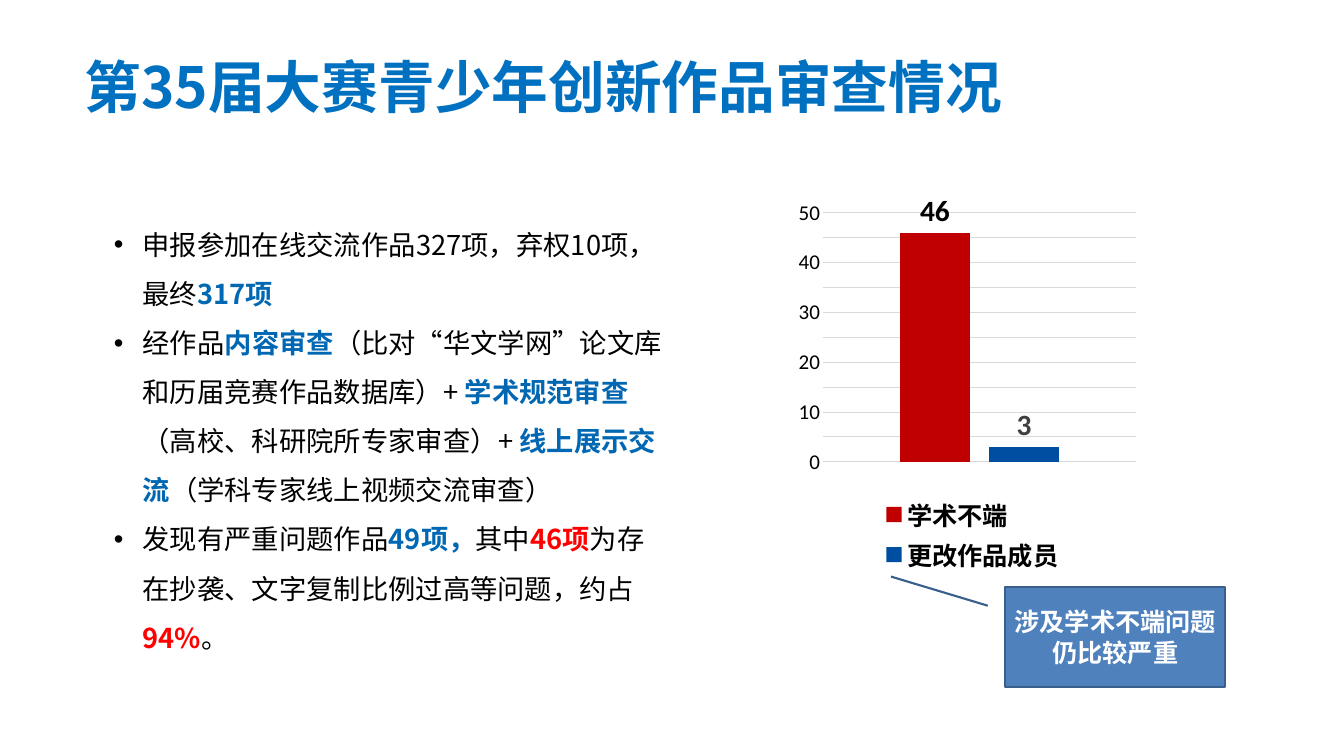
from copy import deepcopy

from lxml import etree
from pptx import Presentation
from pptx.chart.data import CategoryChartData
from pptx.dml.color import RGBColor
from pptx.enum.chart import XL_CHART_TYPE, XL_LABEL_POSITION as LabelPos
from pptx.enum.chart import XL_LEGEND_POSITION as LegendPos, XL_TICK_MARK as Tick
from pptx.enum.shapes import MSO_SHAPE
from pptx.enum.text import MSO_ANCHOR, MSO_AUTO_SIZE, PP_ALIGN
from pptx.oxml import parse_xml
from pptx.oxml.ns import nsdecls, qn
from pptx.util import Inches, Pt

COLORS = {"title": "0070C0", "text": "000000", "blue": "0067B2", "red": "FF0000",
          "grid": "D9D9D9", "callout": "4F81BD", "border": "3A5F8C", "white": "FFFFFF",
          "misconduct": "C00000", "members": "004EA1", "gray": "404040"}
CJK = "Noto Sans CJK SC"


def style(font, size, color, bold=False, name=CJK):
    font.size, font.bold, font.name = Pt(size), bold, name
    font.color.rgb = RGBColor.from_string(COLORS[color])


def style_run(r, size, color, bold=False, name=CJK):
    style(r.font, size, color, bold, name)
    ea = etree.SubElement(r.font._element, qn("a:ea"))
    ea.set("typeface", CJK)


prs = Presentation()
prs.slide_width, prs.slide_height = Inches(17.78), Inches(10)
s = prs.slides.add_slide(prs.slide_layouts[5])

# Title
title = s.shapes.title
title.left, title.top = Inches(1.02), Inches(0.67)
title.width, title.height = Inches(16.25), Inches(0.94)
tf = title.text_frame
tf.text = "第35届大赛青少年创新作品审查情况"
tf.vertical_anchor = MSO_ANCHOR.MIDDLE
tf.auto_size = MSO_AUTO_SIZE.NONE
p = tf.paragraphs[0]
p.alignment = PP_ALIGN.LEFT
style_run(p.runs[0], 54, "title", True)

# Review findings: coloured runs are bold
findings = [
    [("申报参加在线交流作品327项，弃权10项，最终", "text"), ("317项", "blue")],
    [("经作品", "text"), ("内容审查", "blue"),
     ("（比对“华文学网”论文库和历届竞赛作品数据库）+ ", "text"), ("学术规范审查", "blue"),
     ("（高校、科研院所专家审查）+ ", "text"), ("线上展示交流", "blue"),
     ("（学科专家线上视频交流审查）", "text")],
    [("发现有严重问题作品", "text"), ("49项，", "blue"), ("其中", "text"), ("46项", "red"),
     ("为存在抄袭、文字复制比例过高等问题，约占", "text"), ("94%", "red"), ("。", "text")],
]
tf = s.shapes.add_textbox(Inches(1.41), Inches(2.75), Inches(7.57), Inches(6.01)).text_frame
tf.word_wrap = True
tf.auto_size = MSO_AUTO_SIZE.SHAPE_TO_FIT_TEXT
for i, finding in enumerate(findings):
    p = tf.paragraphs[0] if i == 0 else tf.add_paragraph()
    p.line_spacing = 1.5
    pPr = p._p.get_or_add_pPr()
    pPr.set("marL", str(Inches(0.38)))
    pPr.set("indent", str(-Inches(0.38)))
    etree.SubElement(pPr, qn("a:buFont")).set("typeface", "Arial")
    etree.SubElement(pPr, qn("a:buChar")).set("char", "•")
    for text, color in finding:
        r = p.add_run()
        r.text = text
        style_run(r, 26, color, color != "text")

# Column chart of problem types
data = CategoryChartData()
data.categories = ["1"]
data.add_series("学术不端", [46])
data.add_series("更改作品成员", [3])
chart = s.shapes.add_chart(XL_CHART_TYPE.COLUMN_CLUSTERED, Inches(10.47), Inches(2.56),
                           Inches(4.65), Inches(5.07), data).chart
chart.has_title = False
style(chart.font, 10, "text", name="Calibri")
plot = chart.plots[0]
plot.gap_width, plot.overlap, plot.vary_by_categories = 219, -27, False
for series, color, label in zip(plot.series, ["misconduct", "members"], ["text", "gray"]):
    series.format.fill.solid()
    series.format.fill.fore_color.rgb = RGBColor.from_string(COLORS[color])
    labels = series.data_labels
    labels.show_value, labels.position = True, LabelPos.OUTSIDE_END
    style(labels.font, 28, label, True, "Calibri")

# Axes and gridlines; the minor gridlines take the look of the major ones
chart.category_axis.visible = False
axis = chart.value_axis
axis.minimum_scale, axis.maximum_scale = 0, 50
axis.major_unit, axis.minor_unit = 10, 5
axis.major_tick_mark = axis.minor_tick_mark = Tick.NONE
axis.format.line.fill.background()
style(axis.tick_labels.font, 20, "text", name="Calibri")
axis.has_major_gridlines = axis.has_minor_gridlines = True
grid = axis.major_gridlines.format.line
grid.color.rgb = RGBColor.from_string(COLORS["grid"])
grid.width = Pt(0.75)
major, minor = (axis._element.find(qn(f"c:{k}Gridlines")) for k in ("major", "minor"))
minor.append(deepcopy(major.find(qn("c:spPr"))))

# Legend, then the places of plot and legend inside the chart
chart.has_legend = True
legend = chart.legend
legend.position, legend.include_in_layout = LegendPos.BOTTOM, False
style(legend.font, 24, "text", True, "Calibri")
plot_area = chart._chartSpace.chart.plotArea
for parent, index, target, box in [
        (plot_area, 0, '<c:layoutTarget val="inner"/>', (0.09, 0.05, 0.89, 0.65)),
        (legend._element, 1, "", (0.24, 0.78, 0.55, 0.22))]:
    for old in parent.findall(qn("c:layout")):
        parent.remove(old)
    modes = '<c:xMode val="edge"/><c:yMode val="edge"/>'
    sizes = "".join(f'<c:{k} val="{v}"/>' for k, v in zip("xywh", box))
    parent.insert(index, parse_xml(f'<c:layout {nsdecls("c")}><c:manualLayout>{target}'
                                   f'{modes}{sizes}</c:manualLayout></c:layout>'))

# Callout
callout = s.shapes.add_shape(MSO_SHAPE.LINE_CALLOUT_1, Inches(13.3), Inches(7.76),
                             Inches(2.91), Inches(1.33))
for i, value in enumerate([0.19, -0.08, -0.1, -0.52]):
    callout.adjustments[i] = value
callout.shadow.inherit = False
callout.fill.solid()
callout.fill.fore_color.rgb = RGBColor.from_string(COLORS["callout"])
callout.line.color.rgb = RGBColor.from_string(COLORS["border"])
callout.line.width = Pt(2)
tf = callout.text_frame
tf.text = "涉及学术不端问题仍比较严重"
tf.word_wrap = True
tf.vertical_anchor = MSO_ANCHOR.MIDDLE
p = tf.paragraphs[0]
p.alignment = PP_ALIGN.CENTER
style_run(p.runs[0], 24, "white", True, "Arial")

prs.save("out.pptx")
